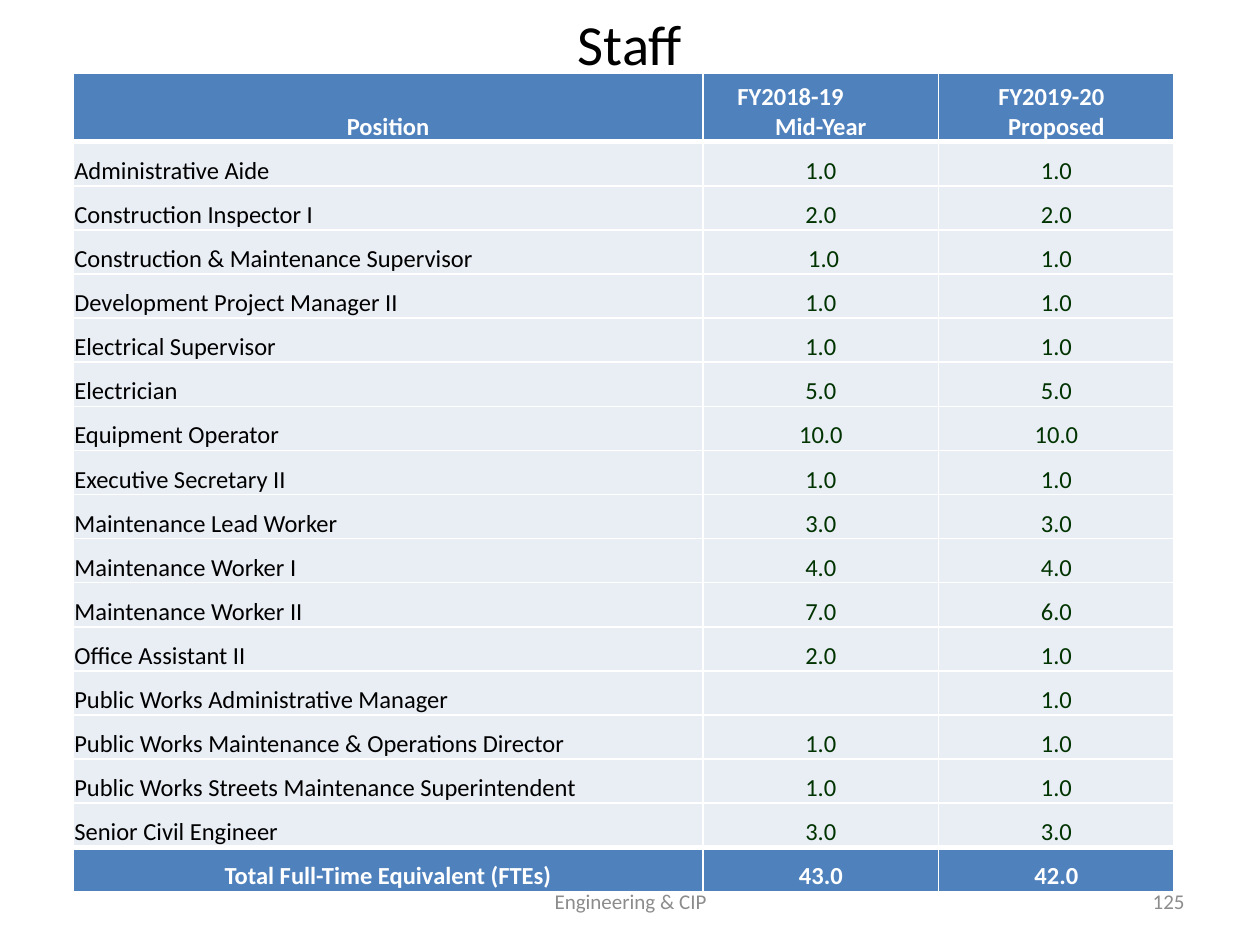
from lxml import etree
from pptx import Presentation
from pptx.dml.color import RGBColor
from pptx.enum.text import MSO_ANCHOR, MSO_AUTO_SIZE, PP_ALIGN
from pptx.oxml.ns import qn
from pptx.util import Inches, Pt

LEFT, MID, RIGHT = PP_ALIGN.LEFT, PP_ALIGN.CENTER, PP_ALIGN.RIGHT
CENTER, BOTTOM = MSO_ANCHOR.MIDDLE, MSO_ANCHOR.BOTTOM
FIXED = MSO_AUTO_SIZE.NONE
WHITE, BLACK, BLUE, PALE, GREEN, GRAY = (
    "FFFFFF", "000000", "4F81BD", "E9EDF4", "003300", "8C8C8C")

HEAD = ["Position", "FY2018-19\nMid-Year", "FY2019-20\nProposed"]
# Extra right inset that moves the year left of its column's centre
SHIFTS = [0, 0.48, 0.08]
STAFF = [
    ("Administrative Aide", "1.0", "1.0"),
    ("Construction Inspector I", "2.0", "2.0"),
    ("Construction & Maintenance Supervisor", " 1.0", "1.0"),
    ("Development Project Manager II", "1.0", "1.0"),
    ("Electrical Supervisor", "1.0", "1.0"),
    ("Electrician", "5.0", "5.0"),
    ("Equipment Operator", "10.0", "10.0"),
    ("Executive Secretary II", "1.0", "1.0"),
    ("Maintenance Lead Worker", "3.0", "3.0"),
    ("Maintenance Worker I", "4.0", "4.0"),
    ("Maintenance Worker II", "7.0", "6.0"),
    ("Office Assistant II", "2.0", "1.0"),
    ("Public Works Administrative Manager", "", "1.0"),
    ("Public Works Maintenance & Operations Director", "1.0", "1.0"),
    ("Public Works Streets Maintenance Superintendent", "1.0", "1.0"),
    ("Senior Civil Engineer", "3.0", "3.0"),
]
TOTAL = ("Total Full-Time Equivalent (FTEs)", "43.0", "42.0")


def color(code):
    return RGBColor.from_string(code)


class Deck:
    font = "Calibri"
    wide, high = 10, 7.5

    def __init__(self):
        self.prs = Presentation()
        self.prs.slide_width = Inches(self.wide)
        self.prs.slide_height = Inches(self.high)
        self.slide = self.prs.slides.add_slide(self.prs.slide_layouts[5])

    def box(self, x, y, w, h):
        """Turn shares of the slide into lengths."""
        return (Inches(x * self.wide), Inches(y * self.high),
                Inches(w * self.wide), Inches(h * self.high))

    def text(self, frame, words, size, ink, align, bold=False):
        frame.text = words
        for para in frame.paragraphs:
            para.alignment = align
            font = para.font
            font.name, font.size, font.bold = self.font, Pt(size), bold
            font.color.rgb = color(ink)

    def title(self, words, area, size):
        shape = self.slide.shapes.title
        shape.left, shape.top, shape.width, shape.height = self.box(*area)
        frame = shape.text_frame
        frame.auto_size, frame.vertical_anchor = FIXED, CENTER
        self.text(frame, words, size, BLACK, MID)

    def label(self, words, area, align):
        frame = self.slide.shapes.add_textbox(*self.box(*area)).text_frame
        frame.word_wrap, frame.vertical_anchor = True, CENTER
        self.text(frame, words, 12, GRAY, align)

    def edges(self, cell, top, base):
        props = cell._tc.get_or_add_tcPr()
        for side, width in zip("LRTB", (1, 1, top, base)):
            line = etree.SubElement(props, qn(f"a:ln{side}"), w=str(Pt(width)))
            fill = etree.SubElement(line, qn("a:solidFill"))
            etree.SubElement(fill, qn("a:srgbClr"), val=WHITE)

    def cell(self, cell, words, fill, ink, align, bold, top, base):
        self.edges(cell, top, base)
        cell.fill.solid()
        cell.fill.fore_color.rgb = color(fill)
        cell.margin_left = cell.margin_right = cell.margin_top = Inches(0.01)
        cell.margin_bottom = 0
        cell.vertical_anchor = BOTTOM
        self.text(cell.text_frame, words, 14, ink, align, bold)

    def table(self, rows, area, cols, heights):
        table = self.slide.shapes.add_table(
            len(rows), len(cols), *self.box(*area)).table
        for col, width in zip(table.columns, cols):
            col.width = Inches(width)
        for row, height in zip(table.rows, heights):
            row.height = Inches(height)
        last = len(rows) - 1
        for r, row in enumerate(rows):
            band = r in (0, last)
            top = 3 if r in (1, last) else 1
            base = 3 if r in (0, last - 1) else 1
            for c, words in enumerate(row):
                ink = WHITE if band else GREEN if c else BLACK
                self.cell(table.cell(r, c), words, BLUE if band else PALE, ink,
                          MID if band or c else LEFT, band, top, base)
        return table

    def shift(self, cell, gap):
        """Move the first line left and keep the second one centred."""
        cell.margin_right += Inches(gap)
        props = cell.text_frame.paragraphs[1]._p.get_or_add_pPr()
        props.set("marL", str(Inches(gap)))


def main():
    deck = Deck()

    # Title
    deck.title("Staff", (0.05, 0, 0.9, 0.09), 32.4)

    # Staff table
    rows = [HEAD, *STAFF, TOTAL]
    heights = [0.54] + [0.35] * (len(rows) - 1)
    table = deck.table(rows, (0.058, 0.078, 0.874, 0.866),
                       (5, 1.87, 1.87), heights)
    for c, gap in enumerate(SHIFTS):
        if gap:
            deck.shift(table.cell(0, c), gap)

    # Footer and page number
    deck.label("Engineering & CIP", (0.342, 0.927, 0.317, 0.053), MID)
    deck.label("125", (0.717, 0.927, 0.233, 0.053), RIGHT)

    deck.prs.save("out.pptx")


if __name__ == "__main__":
    main()
